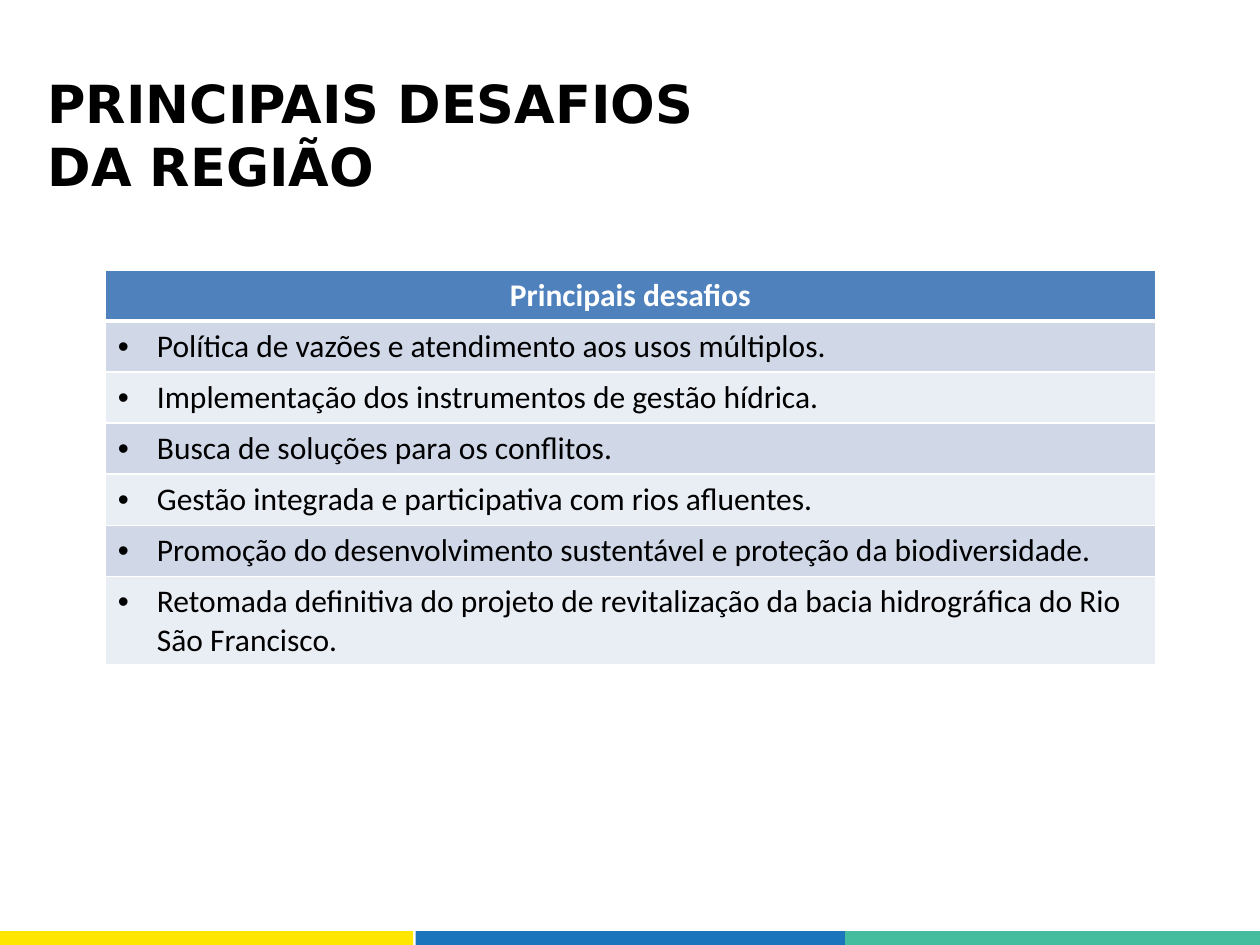
from lxml.etree import SubElement
from pptx import Presentation
from pptx.dml.color import RGBColor
from pptx.enum.shapes import MSO_SHAPE
from pptx.enum.text import PP_ALIGN
from pptx.oxml.ns import qn
from pptx.util import Cm, Pt

BLACK = RGBColor(0x00, 0x00, 0x00)
WHITE = RGBColor(0xFF, 0xFF, 0xFF)
HEADER_BLUE = RGBColor(0x4F, 0x81, 0xBD)
BANDS = [RGBColor(0xD0, 0xD8, 0xE8), RGBColor(0xE9, 0xED, 0xF4)]
YELLOW = RGBColor(0xFF, 0xE6, 0x00)
BLUE = RGBColor(0x1B, 0x75, 0xBC)
GREEN = RGBColor(0x43, 0xBD, 0x9E)

TITLE = "PRINCIPAIS DESAFIOS DA REGIÃO"
HEADER = "Principais desafios"
CHALLENGES = [
    "Política de vazões e atendimento aos usos múltiplos.",
    "Implementação dos instrumentos de gestão hídrica.",
    "Busca de soluções para os conflitos.",
    "Gestão integrada e participativa com rios afluentes.",
    "Promoção do desenvolvimento sustentável e proteção da biodiversidade.",
    "Retomada definitiva do projeto de revitalização da bacia hidrográfica do Rio São Francisco.",
]
FOOTER_BARS = [(-0.33, YELLOW), (8.38, BLUE), (17.04, GREEN)]  # left in cm, colour

ROW_HEIGHT, LAST_ROW_HEIGHT = 1.03, 1.78
BULLET_INDENT = Cm(0.79)


def add_run(p, text, font, size, color, bold=False):
    r = p.add_run()
    r.text = text
    r.font.name = font
    r.font.size = Pt(size)
    r.font.bold = bold
    r.font.color.rgb = color


def add_bullet(p):
    pPr = p._p.get_or_add_pPr()
    pPr.set("marL", str(BULLET_INDENT))
    pPr.set("indent", str(-BULLET_INDENT))
    SubElement(pPr, qn("a:buFont"), typeface="Arial")
    SubElement(pPr, qn("a:buChar"), char="•")


def style_cell(cell, color, top=1, bottom=1):
    """Fill the cell and give it white borders; top and bottom are in points."""
    tcPr = cell._tc.get_or_add_tcPr()
    for side, width in (("L", 1), ("R", 1), ("T", top), ("B", bottom)):
        ln = SubElement(tcPr, qn(f"a:ln{side}"), w=str(Pt(width)))
        fill = SubElement(ln, qn("a:solidFill"))
        SubElement(fill, qn("a:srgbClr"), val=str(WHITE))
    cell.fill.solid()
    cell.fill.fore_color.rgb = color


prs = Presentation()
prs.slide_width, prs.slide_height = Cm(25.4), Cm(19.05)
s = prs.slides.add_slide(prs.slide_layouts[6])

for left, color in FOOTER_BARS:
    bar = s.shapes.add_shape(MSO_SHAPE.RECTANGLE, Cm(left), Cm(18.77), Cm(8.66), Cm(0.36))
    bar.shadow.inherit = False
    bar.fill.solid()
    bar.fill.fore_color.rgb = color
    bar.line.fill.background()

title = s.shapes.add_textbox(Cm(0.71), Cm(1.3), Cm(15.19), Cm(1.5))
title.text_frame.word_wrap = True
add_run(title.text_frame.paragraphs[0], TITLE, "DejaVu Sans", 30, BLACK, bold=True)

heights = [ROW_HEIGHT] * len(CHALLENGES) + [LAST_ROW_HEIGHT]
table = s.shapes.add_table(len(heights), 1, Cm(2.12), Cm(5.44), Cm(21.18), Cm(sum(heights))).table
for row, height in zip(table.rows, heights):
    row.height = Cm(height)

header = table.cell(0, 0)
style_cell(header, HEADER_BLUE, bottom=3)
p = header.text_frame.paragraphs[0]
p.alignment = PP_ALIGN.CENTER
add_run(p, HEADER, "Calibri", 18, WHITE, bold=True)

for i, challenge in enumerate(CHALLENGES):
    cell = table.cell(i + 1, 0)
    style_cell(cell, BANDS[i % 2], top=3 if i == 0 else 1)
    p = cell.text_frame.paragraphs[0]
    add_bullet(p)
    add_run(p, challenge, "Calibri", 18, BLACK)

prs.save("out.pptx")
